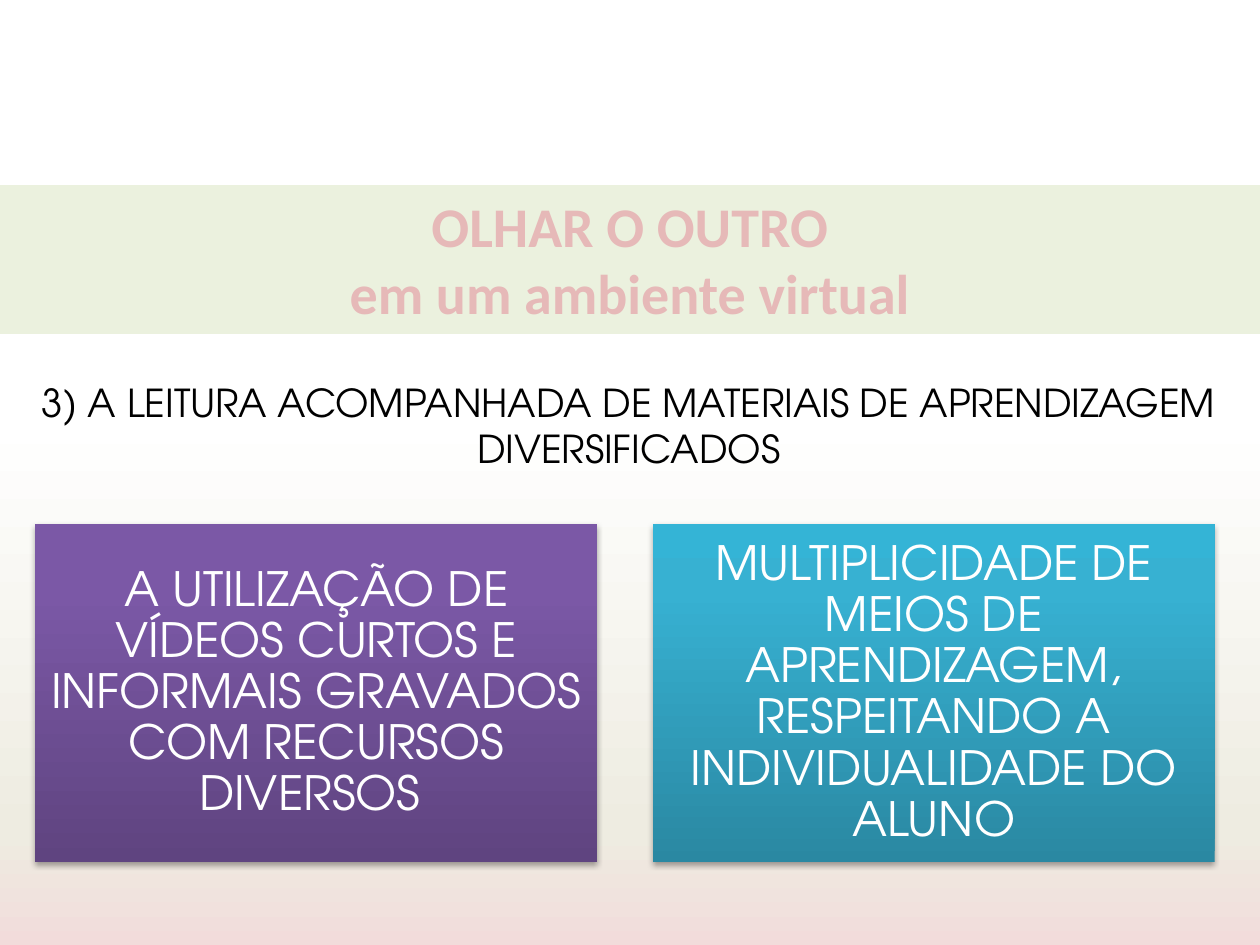
from dataclasses import dataclass

from lxml import etree
from pptx import Presentation
from pptx import util as u
from pptx.dml.color import RGBColor
from pptx.enum import shapes, text
from pptx.oxml import parse_xml
from pptx.oxml.ns import nsdecls, qn


@dataclass(frozen=True)
class Theme:
    heading_font: str = "Calibri"
    body_font: str = "TeX Gyre Adventor"
    heading_size: int = 32
    topic_size: int = 22
    card_size: int = 27
    band: str = "EBF1DE"
    heading: str = "E6B9B8"
    heading_outline: str = "C0504D"
    topic: str = "000000"
    card_text: str = "FFFFFF"
    page: tuple = ((0, "FFFFFF"), (44, "FFFFFF"), (88, "EEECE1"), (100, "F2DCDB"))
    purple: tuple = ((0, "5F4480"), (80, "7B58A6"), (100, "7C57A8"))
    blue: tuple = ((0, "2A88A2"), (80, "37B1D2"), (100, "34B4D6"))


@dataclass(frozen=True)
class Area:
    left: float
    top: float
    width: float
    height: float

    def emu(self) -> tuple:
        return tuple(u.Emu(round(share * full / 100)) for share, full in (
            (self.left, WIDTH), (self.top, HEIGHT),
            (self.width, WIDTH), (self.height, HEIGHT)))


@dataclass(frozen=True)
class Card:
    words: str
    stops: tuple


THEME = Theme()
WIDTH, HEIGHT = u.Inches(10), u.Inches(7.5)
BAND = Area(0, 19.6, 100, 15.73)
TOPIC = Area(0, 39.47, 99.8, 11.2)
FIRST_CARD = Area(2.8, 55.47, 44.6, 35.73)
CARD_PITCH = 49
CARDS = (
    Card("A UTILIZAÇÃO DE VÍDEOS CURTOS E INFORMAIS GRAVADOS COM RECURSOS DIVERSOS ",
         THEME.purple),
    Card("MULTIPLICIDADE DE MEIOS DE APRENDIZAGEM, RESPEITANDO A INDIVIDUALIDADE DO ALUNO",
         THEME.blue),
)


def paint_gradient(fill, owner, stops: tuple, angle: int) -> None:
    fill.gradient()
    fill.gradient_angle = angle
    stop_list = next(owner.iter(qn("a:gsLst")))
    for old in list(stop_list):
        stop_list.remove(old)
    for percent, color in stops:
        stop = etree.SubElement(stop_list, qn("a:gs"), pos=str(percent * 1000))
        etree.SubElement(stop, qn("a:srgbClr"), val=color)


def add_box(s, area: Area):
    sp = s.shapes.add_shape(shapes.MSO_SHAPE.RECTANGLE, *area.emu())
    sp.shadow.inherit = False
    sp.line.fill.background()
    return sp


def add_shadow(sp) -> None:
    effects = sp._element.spPr.find(qn("a:effectLst"))
    effects.append(parse_xml(
        f'<a:outerShdw {nsdecls("a")} blurRad="{u.Pt(3.1)}" dist="{u.Pt(1.8)}" '
        'dir="5400000" rotWithShape="0"><a:srgbClr val="000000">'
        '<a:alpha val="35000"/></a:srgbClr></a:outerShdw>'))


def write(sp, *lines: str, font: str, size: int, color: str, bold: bool = False,
          outline: str = "", anchor=text.MSO_ANCHOR.TOP, inset: float = 0,
          spacing: float = 1, after: float = 0) -> None:
    tf = sp.text_frame
    tf.word_wrap = True
    tf.vertical_anchor = anchor
    if inset:
        tf.margin_left = tf.margin_right = u.Inches(inset)
        tf.margin_top = tf.margin_bottom = u.Inches(inset)
    for i, line in enumerate(lines):
        p = tf.add_paragraph() if i else tf.paragraphs[0]
        p.alignment = text.PP_ALIGN.CENTER
        p.line_spacing = spacing
        p.space_after = u.Pt(after)
        r = p.add_run()
        r.text = line
        r.font.name, r.font.size, r.font.bold = font, u.Pt(size), bold
        r.font.color.rgb = RGBColor.from_string(color)
        if outline:
            r.font._element.insert(0, parse_xml(
                f'<a:ln {nsdecls("a")} w="{u.Pt(1.75)}"><a:solidFill>'
                f'<a:srgbClr val="{outline}"/></a:solidFill></a:ln>'))


def draw_card(s, card: Card, column: int) -> None:
    first = FIRST_CARD
    sp = add_box(s, Area(first.left + column * CARD_PITCH, first.top,
                         first.width, first.height))
    paint_gradient(sp.fill, sp._element, card.stops, 90)
    add_shadow(sp)
    write(sp, card.words, font=THEME.body_font, size=THEME.card_size,
          color=THEME.card_text, anchor=text.MSO_ANCHOR.MIDDLE, inset=0.11,
          spacing=0.9, after=9.45)


def main() -> None:
    prs = Presentation()
    prs.slide_width, prs.slide_height = WIDTH, HEIGHT
    s = prs.slides.add_slide(prs.slide_layouts[6])
    paint_gradient(s.background.fill, s.element, THEME.page, 270)

    band = add_box(s, BAND)
    band.fill.solid()
    band.fill.fore_color.rgb = RGBColor.from_string(THEME.band)
    write(band, "OLHAR O OUTRO", "em um ambiente virtual", font=THEME.heading_font,
          size=THEME.heading_size, color=THEME.heading, bold=True,
          outline=THEME.heading_outline)

    topic = s.shapes.add_textbox(*TOPIC.emu())
    write(topic, "3) A LEITURA ACOMPANHADA DE MATERIAIS DE APRENDIZAGEM DIVERSIFICADOS",
          font=THEME.body_font, size=THEME.topic_size, color=THEME.topic)

    for column, card in enumerate(CARDS):
        draw_card(s, card, column)
    prs.save("out.pptx")


if __name__ == "__main__":
    main()
